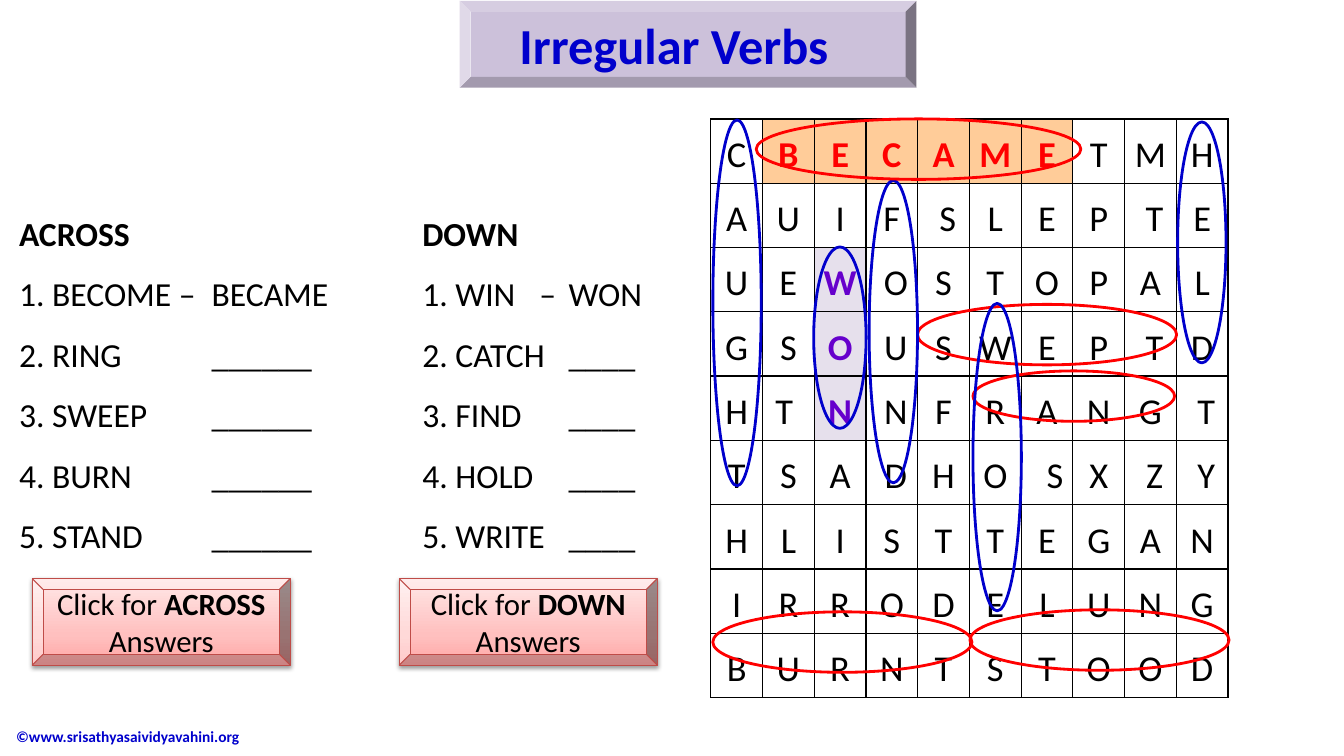
from dataclasses import dataclass

import pptx
import pptx.util
from pptx.dml.color import RGBColor
from pptx.enum.dml import MSO_FILL
from pptx.enum.shapes import MSO_SHAPE
from pptx.enum.text import MSO_ANCHOR, MSO_AUTO_SIZE, PP_ALIGN
from pptx.oxml import parse_xml
from pptx.oxml.ns import nsdecls, qn
from pptx.util import Inches

FONT = "Calibri"
BLACK = RGBColor(0x00, 0x00, 0x00)
BLUE = RGBColor(0x00, 0x00, 0xCC)
RED = RGBColor(0xFF, 0x00, 0x00)
PURPLE = RGBColor(0x66, 0x00, 0xCC)
LILAC = RGBColor(0xCC, 0xC1, 0xDA)
PALE_LILAC = RGBColor(0xE6, 0xE0, 0xEC)
ORANGE = RGBColor(0xFF, 0xCC, 0x99)
BUTTON_LINE = RGBColor(0xBF, 0x4C, 0x48)
BUTTON_STOPS = ((0, "FFA6A5"), (35, "FFC0BF"), (100, "FFE7E7"))

LETTERS = (
    "CBECAMETMH",
    "AUIFSLEPTE",
    "UEWOSTOPAL",
    "GSOUSWEPTD",
    "HTNNFRANGT",
    "TSADHOSXZY",
    "HLISTTEGAN",
    "IRRODELUNG",
    "BURNTSTOOD",
)
# Letters set off centre, in widths of a space; negative moves left.
NUDGES = {
    (1, 4): 1, (1, 8): 1, (2, 3): 1, (3, 3): 1, (3, 8): 1, (4, 1): -1,
    (4, 3): 1, (4, 9): 1, (5, 3): 1, (5, 6): 2, (5, 8): 1, (5, 9): 1,
}
SPACE_WIDTH = 0.08


@dataclass(frozen=True)
class Box:
    left: float
    top: float
    width: float
    height: float

    def lengths(self) -> tuple:
        return tuple(map(Inches, (self.left, self.top, self.width, self.height)))


@dataclass(frozen=True)
class Ring:
    box: Box
    color: RGBColor


@dataclass(frozen=True)
class Clues:
    box: Box
    lines: tuple
    answer_stop: float
    alignment: PP_ALIGN
    dash_stop: float | None = None


@dataclass(frozen=True)
class Button:
    left: float
    direction: str


GRID_BOX = Box(7.05, 1.18, 5.13, 4.8)
RINGS = (
    Ring(Box(9.65, 3.68, 2, 0.5), RED),
    Ring(Box(9.1, 3.02, 2.57, 0.6), RED),
    Ring(Box(7.07, 6.07, 2.57, 0.6), RED),
    Ring(Box(9.62, 6.05, 2.57, 0.6), RED),
    Ring(Box(7.07, 1.19, 0.48, 3.63), BLUE),
    Ring(Box(8.62, 1.79, 0.48, 3), BLUE),
    Ring(Box(11.68, 1.21, 0.48, 2.39), BLUE),
    Ring(Box(9.65, 3.01, 0.48, 3.05), BLUE),
    Ring(Box(7.5, 1.18, 3.22, 0.6), RED),
    Ring(Box(8.07, 2.45, 0.52, 1.8), BLUE),
)
CLUE_LISTS = (
    Clues(
        Box(0.09, 1.86, 3.51, 3.78),
        ("ACROSS", "1. BECOME –\tBECAME", "2. RING\t______", "3. SWEEP\t______",
         "4. BURN\t______", "5. STAND\t______"),
        1.91, PP_ALIGN.JUSTIFY,
    ),
    Clues(
        Box(4.09, 1.86, 2.82, 3.67),
        ("DOWN", "1. WIN\t–\tWON", "2. CATCH\t____", "3. FIND\t____",
         "4. HOLD\t____", "5. WRITE\t____"),
        1.45, PP_ALIGN.LEFT, 1.16,
    ),
)
BUTTONS = (Button(0.32, "ACROSS"), Button(3.96, "DOWN"))


def format_run(run, size: float, color: RGBColor, bold: bool = False) -> None:
    run.font.name = FONT
    run.font.size = pptx.util.Pt(size)
    run.font.color.rgb = color
    run.font.bold = bold


def add_footer(slide) -> None:
    footer = slide.shapes.add_textbox(*Box(-0.44, 7.1, 4.03, 0.41).lengths())
    frame = footer.text_frame
    frame.word_wrap = True
    frame.margin_left = Inches(0.6)
    frame.vertical_anchor = MSO_ANCHOR.MIDDLE
    frame.text = "©www.srisathyasaividyavahini.org"
    format_run(frame.paragraphs[0].runs[0], 11, BLUE, True)


def add_title(slide) -> None:
    title = slide.shapes.title
    title.left, title.top, title.width, title.height = Box(1.6, 0.08, 10.17, 0.72).lengths()
    title.text_frame.text = "Irregular Verbs"
    title.text_frame.vertical_anchor = MSO_ANCHOR.MIDDLE
    paragraph = title.text_frame.paragraphs[0]
    paragraph.alignment = PP_ALIGN.CENTER
    format_run(paragraph.runs[0], 36, BLUE, True)
    plate = slide.shapes.add_shape(MSO_SHAPE.BEVEL, *Box(4.56, 0.01, 4.53, 0.86).lengths())
    plate.shadow.inherit = False
    plate.fill.solid()
    plate.fill.fore_color.rgb = LILAC
    plate.line.fill.background()
    title.element.addprevious(plate.element)


def letter_style(row: int, column: int) -> tuple:
    """Return the letter colour and cell fill, marking the two solved words."""
    if row == 0 and 1 <= column <= 6:
        return RED, ORANGE
    if column == 2 and 2 <= row <= 4:
        return PURPLE, PALE_LILAC
    return BLACK, None


def add_letter_grid(slide) -> None:
    frame = slide.shapes.add_table(len(LETTERS), len(LETTERS[0]), *GRID_BOX.lengths())
    table = frame.table
    table.first_row = table.horz_banding = False
    for column in table.columns:
        column.width = Inches(GRID_BOX.width / len(LETTERS[0]))
    for row in table.rows:
        row.height = Inches(0.52)
    table.rows[len(LETTERS) - 1].height = Inches(0.64)
    for row, word in enumerate(LETTERS):
        for column, letter in enumerate(word):
            cell = table.cell(row, column)
            shift = NUDGES.get((row, column), 0) * SPACE_WIDTH
            cell.margin_left = Inches(0.07 + max(shift, 0))
            cell.margin_right = Inches(0.07 + max(-shift, 0))
            cell.margin_top = cell.margin_bottom = Inches(0.07)
            color, fill = letter_style(row, column)
            if fill is None:
                cell.fill.background()
            else:
                cell.fill.solid()
                cell.fill.fore_color.rgb = fill
            paragraph = cell.text_frame.paragraphs[0]
            paragraph.text = letter
            paragraph.alignment = PP_ALIGN.CENTER
            paragraph.line_spacing = 1.15
            format_run(paragraph.runs[0], 26, color, fill is not None)
    for properties in frame.element.iter(qn("a:tcPr")):
        for index, side in enumerate("LRTB"):
            properties.insert(index, parse_xml(
                f'<a:ln{side} {nsdecls("a")} w="12700"><a:solidFill>'
                f'<a:srgbClr val="{BLACK}"/></a:solidFill></a:ln{side}>'))


def add_clues(slide, clues: Clues) -> None:
    frame = slide.shapes.add_textbox(*clues.box.lengths()).text_frame
    frame.word_wrap = True
    frame.auto_size = MSO_AUTO_SIZE.SHAPE_TO_FIT_TEXT
    frame.text = "\n".join(clues.lines)
    for number, paragraph in enumerate(frame.paragraphs):
        paragraph.alignment = clues.alignment
        paragraph.line_spacing = 1.5
        stops = [clues.answer_stop]
        if paragraph.text.count("\t") == 2:
            stops.insert(0, clues.dash_stop)
        tabs = "".join(f'<a:tab pos="{Inches(stop)}" algn="l"/>' for stop in stops)
        paragraph.runs[0].font.bold = number == 0
        paragraph.alignment = clues.alignment
        properties = next(paragraph.runs[0].font and frame.paragraphs[number]._p.iter(qn("a:pPr")))
        properties.append(parse_xml(f'<a:tabLst {nsdecls("a")}>{tabs}</a:tabLst>'))
        for run in paragraph.runs:
            format_run(run, 24, BLACK, number == 0)


def add_button(slide, button: Button) -> None:
    shape = slide.shapes.add_shape(MSO_SHAPE.BEVEL, *Box(button.left, 5.74, 2.56, 0.86).lengths())
    shape.line.color.rgb = BUTTON_LINE
    shape.line.width = pptx.util.Pt(0.75)
    shape.fill.gradient()
    stops = "".join(f'<a:gs pos="{position * 1000}"><a:srgbClr val="{color}"/></a:gs>'
                    for position, color in BUTTON_STOPS)
    gradient = next(shape.element.iter(qn("a:gradFill")))
    gradient.getparent().replace(gradient, parse_xml(
        f'<a:gradFill {nsdecls("a")} rotWithShape="1"><a:gsLst>{stops}</a:gsLst>'
        '<a:lin ang="16200000" scaled="1"/></a:gradFill>'))
    shape.shadow.inherit = False
    next(shape.element.iter(qn("a:effectLst"))).append(parse_xml(
        f'<a:outerShdw {nsdecls("a")} blurRad="40000" dist="20000" dir="5400000" '
        f'rotWithShape="0"><a:srgbClr val="{BLACK}"><a:alpha val="38000"/></a:srgbClr></a:outerShdw>'))
    paragraph = shape.text_frame.paragraphs[0]
    paragraph.alignment = PP_ALIGN.CENTER
    for text in ("Click for ", button.direction, " Answers"):
        run = paragraph.add_run()
        run.text = text
        format_run(run, 22, BLACK, text == button.direction)


def add_ring(slide, ring: Ring) -> None:
    shape = slide.shapes.add_shape(MSO_SHAPE.OVAL, *ring.box.lengths())
    shape.shadow.inherit = False
    shape.fill.background()
    shape.line.color.rgb = ring.color
    shape.line.width = pptx.util.Pt(2)


def main() -> None:
    presentation = pptx.Presentation()
    presentation.slide_width, presentation.slide_height = Inches(13.33), Inches(7.5)
    slide = presentation.slides.add_slide(presentation.slide_layouts[5])
    add_footer(slide)
    add_title(slide)
    add_letter_grid(slide)
    for clues in CLUE_LISTS:
        add_clues(slide, clues)
    for button in BUTTONS:
        add_button(slide, button)
    for ring in RINGS:
        add_ring(slide, ring)
    presentation.save("out.pptx")


if __name__ == "__main__":
    main()
